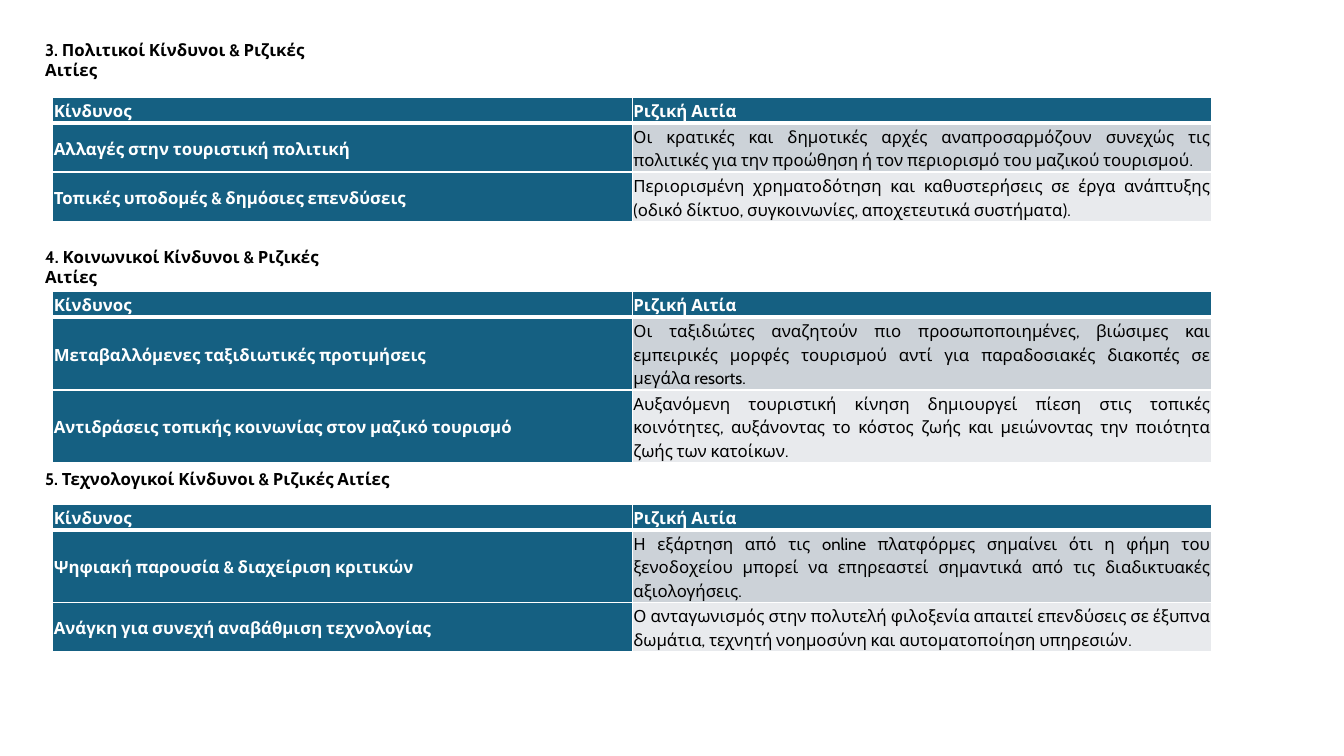
"""Builds a slide of political, social and technological risks with their root causes."""
import dataclasses

import lxml.etree
import pptx
import pptx.dml.color
import pptx.enum.text
import pptx.oxml.ns
import pptx.util

Pt = pptx.util.Pt
Align = pptx.enum.text.PP_ALIGN
Anchor = pptx.enum.text.MSO_ANCHOR


@dataclasses.dataclass(frozen=True)
class Theme:
    """Holds the colours, font and sizes of the slide."""
    font: str = "Cabin"
    size: float = 12
    ink: str = "000000"
    white: str = "FFFFFF"
    teal: str = "156082"
    bands: tuple = ("CCD2D8", "E8EAED")
    thin: float = 1
    thick: float = 3


def write(frame, text, *, theme, color, bold=False, align=None, spacing=None, after=None):
    """Write one formatted paragraph into a text frame."""
    paragraph = frame.paragraphs[0]
    paragraph.alignment = align
    paragraph.line_spacing = spacing
    if after is not None:
        paragraph.space_after = Pt(after)
    run = paragraph.add_run()
    run.text = text
    run.font.name = theme.font
    run.font.size = Pt(theme.size)
    run.font.bold = bold
    run.font.color.rgb = pptx.dml.color.RGBColor.from_string(color)


class RiskSlide:
    """Draws headings and risk tables on one slide in a theme."""

    def __init__(self, slide, theme):
        self.slide = slide
        self.theme = theme

    def heading(self, text, top, width, height):
        """Add a bold section heading."""
        box = self.slide.shapes.add_textbox(Pt(25.2), Pt(top), Pt(width), Pt(height))
        box.text_frame.word_wrap = True
        box.text_frame.vertical_anchor = Anchor.MIDDLE
        write(box.text_frame, text, theme=self.theme, color=self.theme.ink, bold=True)

    def borders(self, cell, bottom):
        """Draw white borders round a cell, with a chosen bottom width."""
        properties = cell._tc.get_or_add_tcPr()
        widths = {"L": self.theme.thin, "R": self.theme.thin, "T": self.theme.thin, "B": bottom}
        for position, (side, width) in enumerate(widths.items()):
            line = lxml.etree.Element(pptx.oxml.ns.qn(f"a:ln{side}"), w=str(Pt(width)))
            fill = lxml.etree.SubElement(line, pptx.oxml.ns.qn("a:solidFill"))
            lxml.etree.SubElement(fill, pptx.oxml.ns.qn("a:srgbClr"), val=self.theme.white)
            properties.insert(position, line)

    def cell(self, cell, text, fill, color, bold, bottom):
        """Fill one table cell with justified text."""
        cell.margin_left = cell.margin_right = cell.margin_top = cell.margin_bottom = Pt(0.75)
        cell.vertical_anchor = Anchor.MIDDLE
        cell.fill.solid()
        cell.fill.fore_color.rgb = pptx.dml.color.RGBColor.from_string(fill)
        self.borders(cell, bottom)
        write(cell.text_frame, text, theme=self.theme, color=color, bold=bold,
              align=Align.JUSTIFY, spacing=1.15, after=8)

    def risk_table(self, top, risks, line_counts):
        """Add a table of risks and root causes under a header row."""
        theme = self.theme
        heights = [1.5 + 16.8 * lines for lines in (1, *line_counts)]
        table = self.slide.shapes.add_table(
            len(heights), 2, Pt(37.7), Pt(top), Pt(828), Pt(sum(heights))).table
        for row, height in zip(table.rows, heights):
            row.height = Pt(height)
        for column, title in enumerate(("Κίνδυνος", "Ριζική Αιτία")):
            self.cell(table.cell(0, column), title, theme.teal, theme.white, True, theme.thick)
        for row, ((risk, cause), band) in enumerate(zip(risks, theme.bands), start=1):
            self.cell(table.cell(row, 0), risk, theme.teal, theme.white, True, theme.thin)
            self.cell(table.cell(row, 1), cause, band, theme.ink, False, theme.thin)


POLITICAL = (
    ("Αλλαγές στην τουριστική πολιτική",
     "Οι κρατικές και δημοτικές αρχές αναπροσαρμόζουν συνεχώς τις πολιτικές για την "
     "προώθηση ή τον περιορισμό του μαζικού τουρισμού."),
    ("Τοπικές υποδομές & δημόσιες επενδύσεις",
     "Περιορισμένη χρηματοδότηση και καθυστερήσεις σε έργα ανάπτυξης (οδικό δίκτυο, "
     "συγκοινωνίες, αποχετευτικά συστήματα)."),
)
SOCIAL = (
    ("Μεταβαλλόμενες ταξιδιωτικές προτιμήσεις",
     "Οι ταξιδιώτες αναζητούν πιο προσωποποιημένες, βιώσιμες και εμπειρικές μορφές "
     "τουρισμού αντί για παραδοσιακές διακοπές σε μεγάλα resorts."),
    ("Αντιδράσεις τοπικής κοινωνίας στον μαζικό τουρισμό",
     "Αυξανόμενη τουριστική κίνηση δημιουργεί πίεση στις τοπικές κοινότητες, αυξάνοντας "
     "το κόστος ζωής και μειώνοντας την ποιότητα ζωής των κατοίκων."),
)
TECHNOLOGICAL = (
    ("Ψηφιακή παρουσία & διαχείριση κριτικών",
     "Η εξάρτηση από τις online πλατφόρμες σημαίνει ότι η φήμη του ξενοδοχείου μπορεί να "
     "επηρεαστεί σημαντικά από τις διαδικτυακές αξιολογήσεις."),
    ("Ανάγκη για συνεχή αναβάθμιση τεχνολογίας",
     "Ο ανταγωνισμός στην πολυτελή φιλοξενία απαιτεί επενδύσεις σε έξυπνα δωμάτια, "
     "τεχνητή νοημοσύνη και αυτοματοποίηση υπηρεσιών."),
)


def main():
    """Build and save the presentation."""
    deck = pptx.Presentation()
    deck.slide_width, deck.slide_height = Pt(960), Pt(540)
    page = RiskSlide(deck.slides.add_slide(deck.slide_layouts[6]), Theme())
    page.risk_table(69.4, POLITICAL, (2, 2))
    page.risk_table(208.2, SOCIAL, (3, 3))
    page.heading("4. Κοινωνικοί Κίνδυνοι & Ριζικές Αιτίες", 179.6, 224, 21.8)
    page.heading("3. Πολιτικοί Κίνδυνοι & Ριζικές Αιτίες", 31.6, 214.5, 21.8)
    page.risk_table(360.2, TECHNOLOGICAL, (3, 2))
    page.heading("5. Τεχνολογικοί Κίνδυνοι & Ριζικές Αιτίες", 324, 934.8, 36)
    deck.save("out.pptx")


if __name__ == "__main__":
    main()
